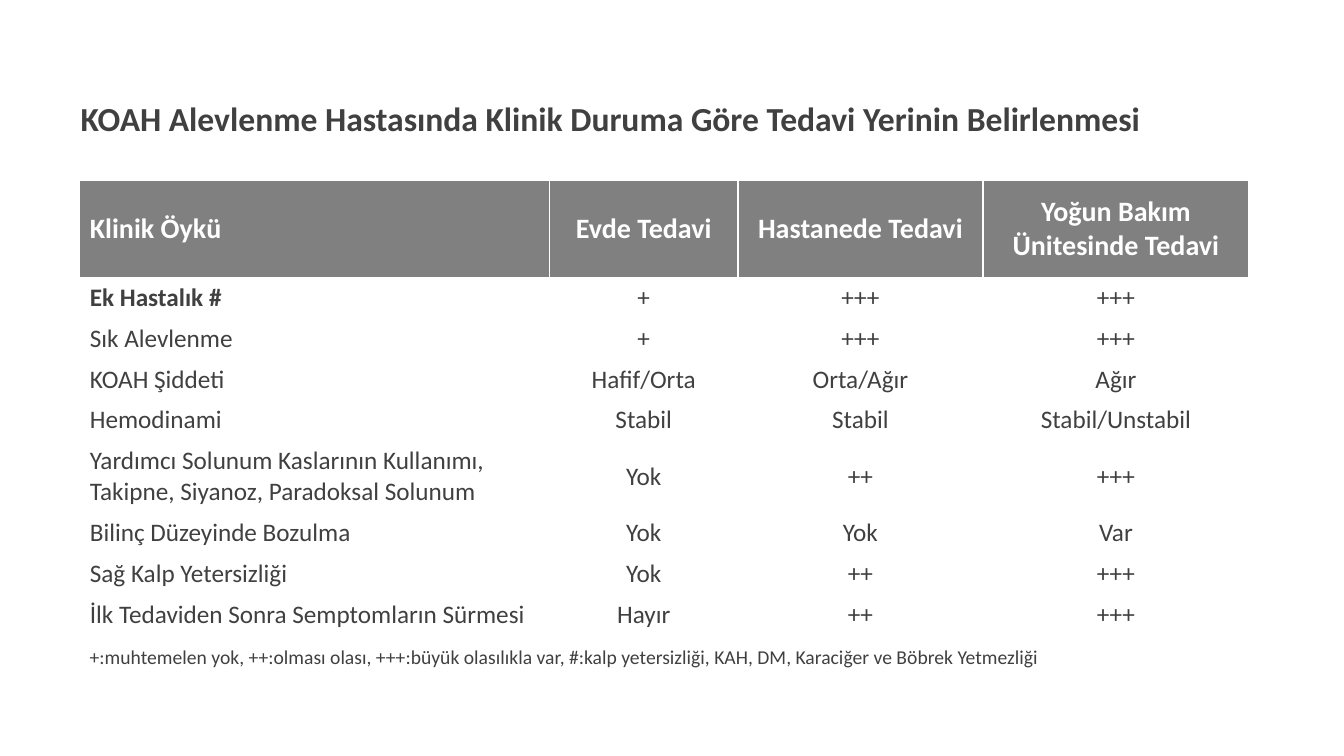
import pptx
import pptx.util
import pptx.dml.color
import pptx.enum.text
import pptx.oxml
import pptx.oxml.ns

Pt = pptx.util.Pt
ALIGN = pptx.enum.text.PP_ALIGN
ANCHOR = pptx.enum.text.MSO_ANCHOR
FONT = "Calibri"
COLORS = {"text": "404040", "header": "808080", "white": "FFFFFF"}

TITLE = "KOAH Alevlenme Hastasında Klinik Duruma Göre Tedavi Yerinin Belirlenmesi"
HEADER = ("Klinik Öykü", "Evde Tedavi", "Hastanede Tedavi",
          "Yoğun Bakım Ünitesinde Tedavi")
ROWS = (
    ("Ek Hastalık #", "+", "+++", "+++"),
    ("Sık Alevlenme", "+", "+++", "+++"),
    ("KOAH Şiddeti", "Hafif/Orta", "Orta/Ağır", "Ağır"),
    ("Hemodinami", "Stabil", "Stabil", "Stabil/Unstabil"),
    ("Yardımcı Solunum Kaslarının Kullanımı, Takipne, Siyanoz, Paradoksal Solunum",
     "Yok", "++", "+++"),
    ("Bilinç Düzeyinde Bozulma", "Yok", "Yok", "Var"),
    ("Sağ Kalp Yetersizliği", "Yok", "++", "+++"),
    ("İlk Tedaviden Sonra Semptomların Sürmesi", "Hayır", "++", "+++"),
)
FOOTNOTE = ("+:muhtemelen yok, ++:olması olası, +++:büyük olasılıkla var, "
            "#:kalp yetersizliği, KAH, DM, Karaciğer ve Böbrek Yetmezliği")
COL_SHARES = (4.66, 1.87, 2.43, 2.64)
HEADER_H, ROW_H = 69, 23


def rgb(name):
    return pptx.dml.color.RGBColor.from_string(COLORS[name])


def write(tf, text, size, color="text", bold=False, align=ALIGN.LEFT, before=0):
    p = tf.paragraphs[0]
    p.alignment = align
    p.space_before = Pt(before)
    r = p.add_run()
    r.text = text
    r.font.name, r.font.size, r.font.bold = FONT, Pt(size), bold
    r.font.color.rgb = rgb(color)
    return p


def set_borders(cell):
    tc_pr = cell._tc.get_or_add_tcPr()
    for i, side in enumerate("LRTB"):
        ln = pptx.oxml.parse_xml(
            f'<a:ln{side} {pptx.oxml.ns.nsdecls("a")} w="12700"><a:solidFill>'
            f'<a:srgbClr val="{COLORS["white"]}"/></a:solidFill></a:ln{side}>')
        tc_pr.insert(i, ln)


def add_title(slide, x, y, w, h):
    sp = slide.shapes.title
    sp.left, sp.top, sp.width, sp.height = Pt(x), Pt(y), Pt(w), Pt(h)
    tf = sp.text_frame
    tf.word_wrap = True
    tf.auto_size = pptx.enum.text.MSO_AUTO_SIZE.NONE
    tf.vertical_anchor = ANCHOR.TOP
    write(tf, TITLE, 24, bold=True).line_spacing = 1.5


def add_treatment_table(slide, x, y, w, h):
    table = slide.shapes.add_table(len(ROWS) + 1, len(HEADER),
                                   Pt(x), Pt(y), Pt(w), Pt(h)).table
    table.horz_banding = False
    for col, share in zip(table.columns, COL_SHARES):
        col.width = Pt(w * share / sum(COL_SHARES))
    for i, texts in enumerate((HEADER, *ROWS)):
        is_header = i == 0
        table.rows[i].height = Pt(HEADER_H if is_header else ROW_H)
        for j, text in enumerate(texts):
            cell = table.cell(i, j)
            cell.vertical_anchor = ANCHOR.MIDDLE
            align = ALIGN.CENTER if j else ALIGN.LEFT
            if is_header:
                cell.fill.solid()
                cell.fill.fore_color.rgb = rgb("header")
                write(cell.text_frame, text, 20, "white", True, align, 3.9)
            else:
                cell.fill.background()
                write(cell.text_frame, text, 18, bold=(i, j) == (1, 0),
                      align=align, before=3.4)
            set_borders(cell)


def add_footnote(slide, x, y, w, h):
    tf = slide.shapes.add_textbox(Pt(x), Pt(y), Pt(w), Pt(h)).text_frame
    tf.word_wrap = True
    write(tf, FOOTNOTE, 14, before=7.2)


def main():
    prs = pptx.Presentation()
    prs.slide_width, prs.slide_height = Pt(960), Pt(540)
    slide = prs.slides.add_slide(prs.slide_layouts[5])
    add_title(slide, 50.4, 51.8, 834, 90)
    add_treatment_table(slide, 57, 129, 835.2, HEADER_H + ROW_H * len(ROWS))
    add_footnote(slide, 57, 457.2, 893.5, 24.5)
    prs.save("out.pptx")


if __name__ == "__main__":
    main()
